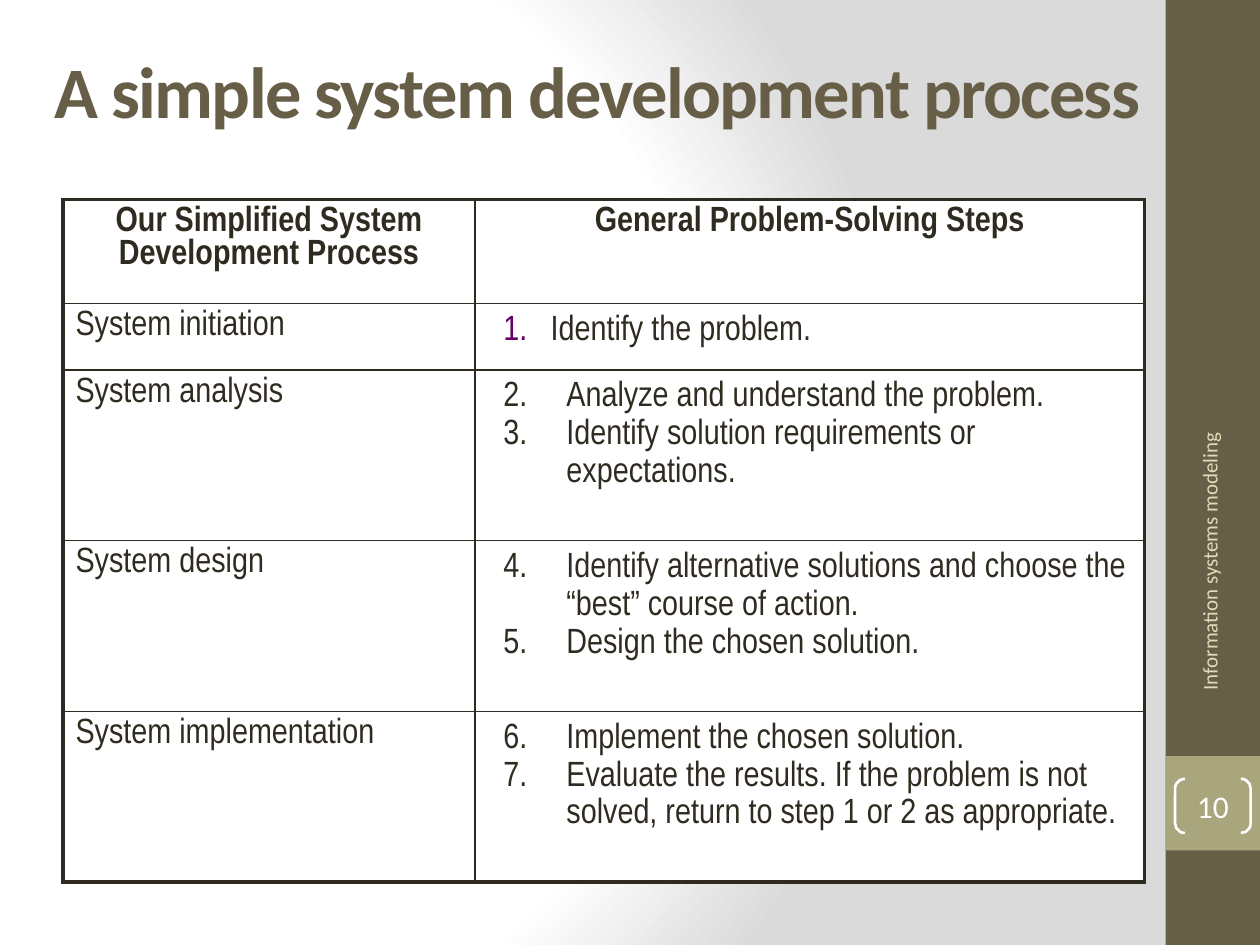
from lxml import etree
from pptx import Presentation
from pptx.dml.color import RGBColor
from pptx.enum.shapes import MSO_SHAPE
from pptx.enum.text import MSO_ANCHOR, PP_ALIGN
from pptx.oxml import parse_xml
from pptx.oxml.ns import qn
from pptx.util import Pt

LEFT, MID, RIGHT = PP_ALIGN.LEFT, PP_ALIGN.CENTER, PP_ALIGN.RIGHT
CENTER = MSO_ANCHOR.MIDDLE
RECT, PAIR = MSO_SHAPE.RECTANGLE, MSO_SHAPE.DOUBLE_BRACKET
NS = 'xmlns:a="http://schemas.openxmlformats.org/drawingml/2006/main"'

HEX = {"ink": "2F2B20", "brown": "675E47", "olive": "A9A57C", "sand": "DFDCB7",
       "white": "FFFFFF", "gray": "DADADA", "purple": "660066"}
SANS, NARROW = "Calibri", "Arial Narrow"

TITLE = "A simple system development process"
FOOTER = "Information systems modeling"
PAGE = "10"
HEADS = ["Our Simplified System Development Process", "General Problem-Solving Steps"]
PHASES = [
    ("System initiation", ["Identify the problem."]),
    ("System analysis", ["Analyze and understand the problem.",
                         "Identify solution requirements or expectations."]),
    ("System design", ["Identify alternative solutions and choose the “best” course of action.",
                       "Design the chosen solution."]),
    ("System implementation", ["Implement the chosen solution.",
                               "Evaluate the results. If the problem is not solved, "
                               "return to step 1 or 2 as appropriate."]),
]
COLS = [235.5, 382.5]
ROWS = [59.5, 38, 97.5, 97.5, 97.5]
BAR, WIDE = 666, 54


def write(frame, lines, size=20, font=NARROW, color="ink", bold=False, align=LEFT,
          anchor=None, before=None):
    """Fill a text frame with one paragraph per line and return the paragraphs."""
    frame.word_wrap = True
    if anchor is not None:
        frame.vertical_anchor = anchor
    for i, line in enumerate(lines):
        para = frame.add_paragraph() if i else frame.paragraphs[0]
        para.alignment = align
        if before is not None:
            para.space_before = Pt(before)
        run = para.add_run()
        run.text = line
        run.font.size, run.font.name, run.font.bold = Pt(size), font, bold
        run.font.color.rgb = RGBColor.from_string(HEX[color])
    return frame.paragraphs


def number(para, start, hang, indent, color):
    """Turn a paragraph into an item of a numbered list."""
    para.level, para.line_spacing = 1, 1.15
    props = para._p.get_or_add_pPr()
    props.set("marL", str(Pt(indent)))
    props.set("indent", str(-Pt(hang)))
    tint = etree.SubElement(props, qn("a:buClr"))
    etree.SubElement(tint, qn("a:srgbClr"), val=HEX[color])
    etree.SubElement(props, qn("a:buAutoNum"), type="arabicPeriod", startAt=str(start))


def border(cell, row, col):
    """Fill a cell and rule it, with heavy lines on the outer edge of the table."""
    cell.fill.solid()
    cell.fill.fore_color.rgb = RGBColor.from_string(HEX["white"])
    outer = {"L": col == 0, "R": col == len(COLS) - 1,
             "T": row == 0, "B": row == len(ROWS) - 1}
    for i, (side, heavy) in enumerate(outer.items()):
        cell._tc.get_or_add_tcPr().insert(i, parse_xml(
            f'<a:ln{side} {NS} w="{Pt(2.25 if heavy else 1)}"><a:solidFill>'
            f'<a:srgbClr val="{HEX["ink"]}"/></a:solidFill></a:ln{side}>'))


def block(slide, kind, box, fill=None, line=None):
    """Add a preset shape with a plain fill or line."""
    shape = slide.shapes.add_shape(kind, *map(Pt, box))
    shape.shadow.inherit = False
    if fill:
        shape.fill.solid()
        shape.fill.fore_color.rgb = RGBColor.from_string(HEX[fill])
    else:
        shape.fill.background()
    if line:
        shape.line.color.rgb = RGBColor.from_string(HEX[line])
        shape.line.width = Pt(1.5)
    else:
        shape.line.fill.background()
    return shape


def shade(slide):
    """Give the slide a radial background."""
    fill = slide.background.fill
    fill.gradient()
    old = slide.background._cSld.find(".//" + qn("a:gradFill"))
    stops = "".join(f'<a:gs pos="{pos}000"><a:srgbClr val="{HEX[name]}"/></a:gs>'
                    for pos, name in [(0, "white"), (75, "white"), (100, "gray")])
    old.getparent().replace(old, parse_xml(
        f'<a:gradFill {NS} rotWithShape="1"><a:gsLst>{stops}</a:gsLst><a:path path="circle">'
        '<a:fillToRect l="20000" t="50000" r="100000" b="50000"/></a:path></a:gradFill>'))


def grid(slide):
    """Add the table of phases and steps."""
    table = slide.shapes.add_table(len(ROWS), len(COLS), Pt(36), Pt(114),
                                   Pt(sum(COLS)), Pt(sum(ROWS))).table
    table.first_row = table.horz_banding = False
    for col, width in zip(table.columns, COLS):
        col.width = Pt(width)
    for row, height in zip(table.rows, ROWS):
        row.height = Pt(height)
    for col, head in enumerate(HEADS):
        write(table.cell(0, col).text_frame, [head], bold=True, align=MID, before=4)
    start = 1
    for row, (phase, steps) in enumerate(PHASES, 1):
        write(table.cell(row, 0).text_frame, [phase], before=4)
        look = (27, 36, "purple") if row == 1 else (36, 45, "ink")
        for para in write(table.cell(row, 1).text_frame, steps):
            number(para, start, *look)
        start += len(steps)
    for row in range(len(ROWS)):
        for col in range(len(COLS)):
            border(table.cell(row, col), row, col)


def main():
    """Build the slide and save it."""
    deck = Presentation()
    deck.slide_width, deck.slide_height = Pt(720), Pt(540)
    slide = deck.slides.add_slide(deck.slide_layouts[5])
    shade(slide)
    title = slide.shapes.title
    title.left, title.top, title.width, title.height = map(Pt, (24, 12, 648, 78))
    head = write(title.text_frame, [TITLE], size=41.4, font=SANS, color="brown",
                 bold=True, anchor=CENTER)[0]
    head.runs[0].font._element.set("spc", "-100")
    block(slide, RECT, (BAR, 0, WIDE, 540), fill="brown")
    block(slide, RECT, (BAR, 432, WIDE, WIDE), fill="olive")
    grid(slide)
    foot = slide.shapes.add_textbox(*map(Pt, (597.75, 319, 186.5, 28.8)))
    foot.rotation = 270
    write(foot.text_frame, [FOOTER], size=12, font=SANS, color="sand",
          align=RIGHT, anchor=CENTER)
    page = block(slide, PAIR, (671.5, 445, 43.2, 31), line="white")
    page.adjustments[0] = 0.18
    frame = page.text_frame
    frame.margin_left = frame.margin_right = frame.margin_top = frame.margin_bottom = 0
    write(frame, [PAGE], size=18, font=SANS, color="white", align=MID, anchor=CENTER)
    deck.save("out.pptx")


if __name__ == "__main__":
    main()
